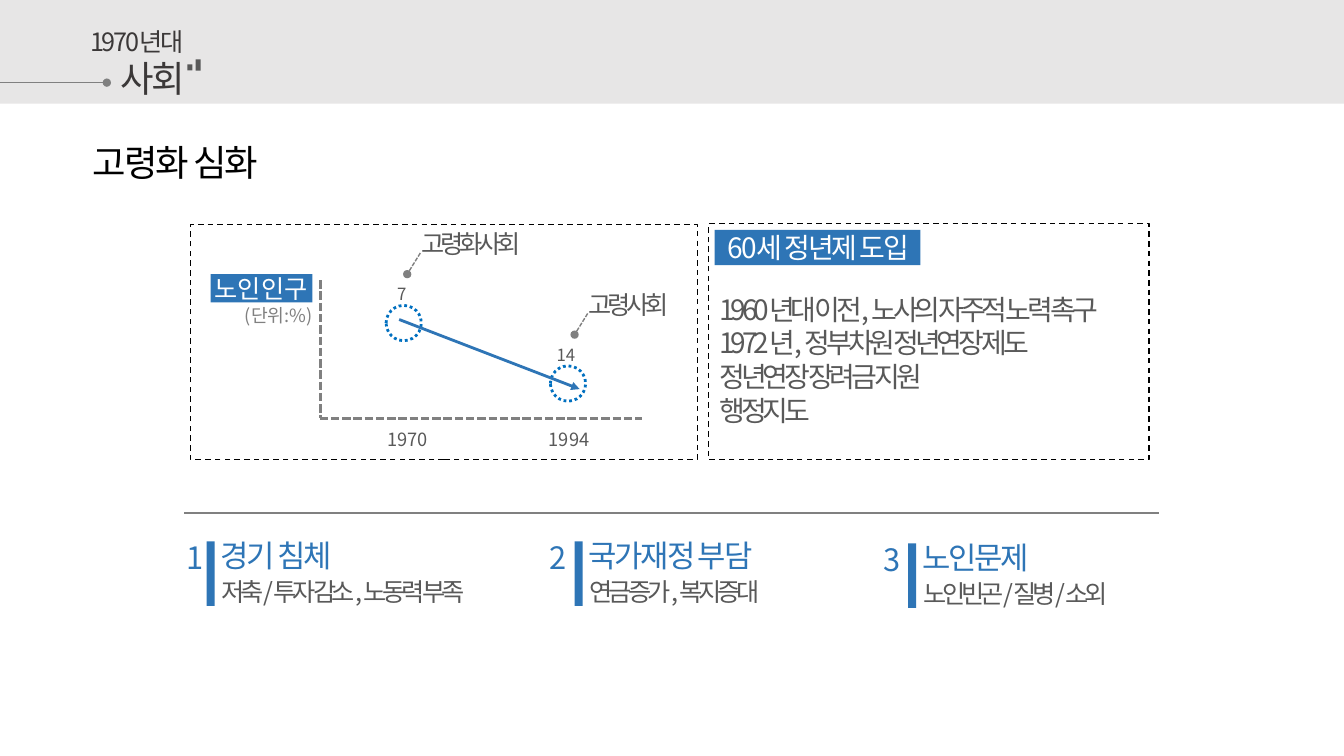
import pptx
import pptx.dml.color
import pptx.enum.dml
import pptx.enum.shapes
import pptx.enum.text
import pptx.oxml.ns
import pptx.util
import lxml.etree

CELL = 0.1  # grid cell, inches
FACE = "Noto Sans CJK KR"
COLORS = {
    "band": "E7E6E6", "title": "3B3838", "black": "000000", "white": "FFFFFF",
    "text": "595959", "line": "808080", "blue": "2E75B6", "ring": "0070C0",
}
SHAPE = pptx.enum.shapes.MSO_SHAPE
ALIGN = pptx.enum.text.PP_ALIGN
DASH = pptx.enum.dml.MSO_LINE


def color(name):
    return pptx.dml.color.RGBColor.from_string(COLORS[name])


def cells(*counts):
    return [pptx.util.Inches(n * CELL) for n in counts]


def child(parent, tag, **attrs):
    return lxml.etree.SubElement(parent, pptx.oxml.ns.qn(tag), **attrs)


class Region:
    """Places parts in grid cells, counted from the region's left top."""

    def __init__(self, shapes, left, top):
        self.shapes, self.left, self.top = shapes, left, top

    def place(self, x, y):
        return cells(self.left + x, self.top + y)

    def stroke(self, line, ink, width, dash):
        line.color.rgb = color(ink)
        line.width = pptx.util.Pt(width)
        if dash:
            line.dash_style = dash

    def shape(self, x, y, w, h, fill=None, ink=None, width=1, dash=None, kind=SHAPE.RECTANGLE):
        part = self.shapes.add_shape(kind, *self.place(x, y), *cells(w, h))
        part.shadow.inherit = False
        if fill:
            part.fill.solid()
            part.fill.fore_color.rgb = color(fill)
        else:
            part.fill.background()
        if ink:
            self.stroke(part.line, ink, width, dash)
        else:
            part.line.fill.background()

    def line(self, start, end, ink="line", width=1, dash=None, tail=None):
        part = self.shapes.add_connector(
            pptx.enum.shapes.MSO_CONNECTOR.STRAIGHT, *self.place(*start), *self.place(*end))
        self.stroke(part.line, ink, width, dash)
        if tail:
            child(part.line._get_or_add_ln(), "a:tailEnd", type=tail)
        child(part._element.spPr, "a:effectLst")

    def text(self, x, y, w, h, words, size, ink="text", align=ALIGN.LEFT,
             track=0, lead=None, middle=False):
        """Write one paragraph per line; track and lead are in points."""
        frame = self.shapes.add_textbox(*self.place(x, y), *cells(w, h)).text_frame
        frame.word_wrap = True
        if middle:
            frame.vertical_anchor = pptx.enum.text.MSO_ANCHOR.MIDDLE
        frame.text = words
        for para in frame.paragraphs:
            para.alignment = align
            if lead:
                para.line_spacing = pptx.util.Pt(lead)
            font = para.font
            font.size = pptx.util.Pt(size)
            font.color.rgb = color(ink)
            font.name = FACE
            child(font._element, "a:ea", typeface=FACE)
            if track:
                font._element.set("spc", str(int(track * 100)))


def header(area, wide):
    area.shape(0, 0, wide, 10.3, "band")
    area.line((0, 8.2), (10.6, 8.2), width=0.5, tail="oval")
    style = dict(ink="title", align=ALIGN.CENTER, track=-1.5, lead=19.5)
    area.text(10.6, 6.7, 9.1, 4, "사회", 26, **style)
    area.text(4.9, 2.4, 17.4, 4, "1970년대", 18, **style)
    area.shape(19.4, 5.9, 0.5, 1.1, "text")
    area.shape(18.6, 6.4, 0.5, 0.6, "text")


def trend(area, wide, high):
    area.shape(0, 0, wide, high, ink="black", dash=DASH.DASH)
    axis = dict(width=2, dash=DASH.SQUARE_DOT)
    area.line((12.9, 5.5), (12.9, 19.2), **axis)
    area.line((12.8, 19.2), (44.8, 19.2), **axis)
    area.shape(2, 4.9, 10.1, 2.8, "blue")
    area.text(0.3, 5.2, 13.4, 2.3, "노인인구", 18, "white", ALIGN.CENTER, middle=True)
    area.text(1.6, 7.4, 14.3, 3.2, "(단위:%)", 13, "line", ALIGN.CENTER)
    points = [(19.4, 8, 0, "1970", "7", "고령화사회"), (35.7, 14, 0.3, "1994", "14", "고령사회")]
    for x, y, nudge, year, value, label in points:
        area.shape(x, y, 3.5, 3.5, ink="ring", width=2, dash=DASH.ROUND_DOT, kind=SHAPE.OVAL)
        area.text(x - 3.6, y - 2.6, 10.3, 3, value, 12, align=ALIGN.CENTER)
        area.text(x - 3.15 - nudge, 19.65, 10.6, 3.2, year, 13, align=ALIGN.CENTER)
        area.line((x + 3.4 + nudge, y - 5.2), (x + 2.1 + nudge, y - 3.1),
                  dash=DASH.SQUARE_DOT, tail="oval")
        area.text(x + 2.5 + nudge, y - 8.1, 11.9, 4, label, 18, track=-3)
    area.line((20.7, 9.4), (38.6, 16.3), "blue", 2, tail="triangle")


def policy(area, wide, high):
    area.shape(0, 0, wide, high, ink="black", dash=DASH.DASH)
    area.shape(0.6, 0.6, 20.4, 3.5, "blue")
    area.text(-0.6, 0.8, 23, 3.8, "60세 정년제 도입", 20, "white",
              ALIGN.CENTER, track=-1.5, lead=19.5)
    steps = ["1960년대 이전, 노사의 자주적 노력 촉구", "1972년, 정부차원 정년연장 제도",
             "정년연장 장려금 지원", "행정지도"]
    area.text(0.1, 6.3, wide, 14.5, "\n".join(steps), 20, track=-3)


def effect(area, gap, number, title, detail):
    """Draw a numbered bar; gap is the number's distance left of it."""
    area.shape(0, 0, 0.8, 6.4, "blue")
    area.text(0.4, -0.95, 35.5, 4.7, title, 22, "blue", track=-1.5)
    area.text(0.5, 2.95, 36.5, 4, detail, 18, track=-3)
    area.text(-gap, -0.75, 3, 4.7, number, 22, "blue", ALIGN.RIGHT)


def main():
    deck = pptx.Presentation()
    deck.slide_width, deck.slide_height = cells(133.33, 75)
    slide = deck.slides.add_slide(deck.slide_layouts[6])

    def group(left, top):
        return Region(slide.shapes.add_group_shape().shapes, left, top)

    header(group(0, 0), 133.33)
    page = Region(slide.shapes, 0, 0)
    page.text(7, 15, 20.8, 3.8, "고령화 심화", 26, "black", ALIGN.CENTER, track=-1.5, lead=19.5)
    trend(group(18.9, 22.3), 50.3, 23.3)
    policy(group(70.3, 22.2), 43.7, 23.4)
    page.line((18.3, 50.9), (115, 50.9), width=2)
    effects = [
        (20.5, 53.7, 3, "1", "경기 침체", "저축/투자 감소, 노동력 부족"),
        (57, 53.7, 3.5, "2", "국가재정 부담", "연금 증가, 복지증대"),
        (90.1, 53.9, 3.4, "3", "노인문제", "노인빈곤/질병/소외"),
    ]
    for left, top, *words in effects:
        effect(group(left, top), *words)
    deck.save("out.pptx")


if __name__ == "__main__":
    main()
